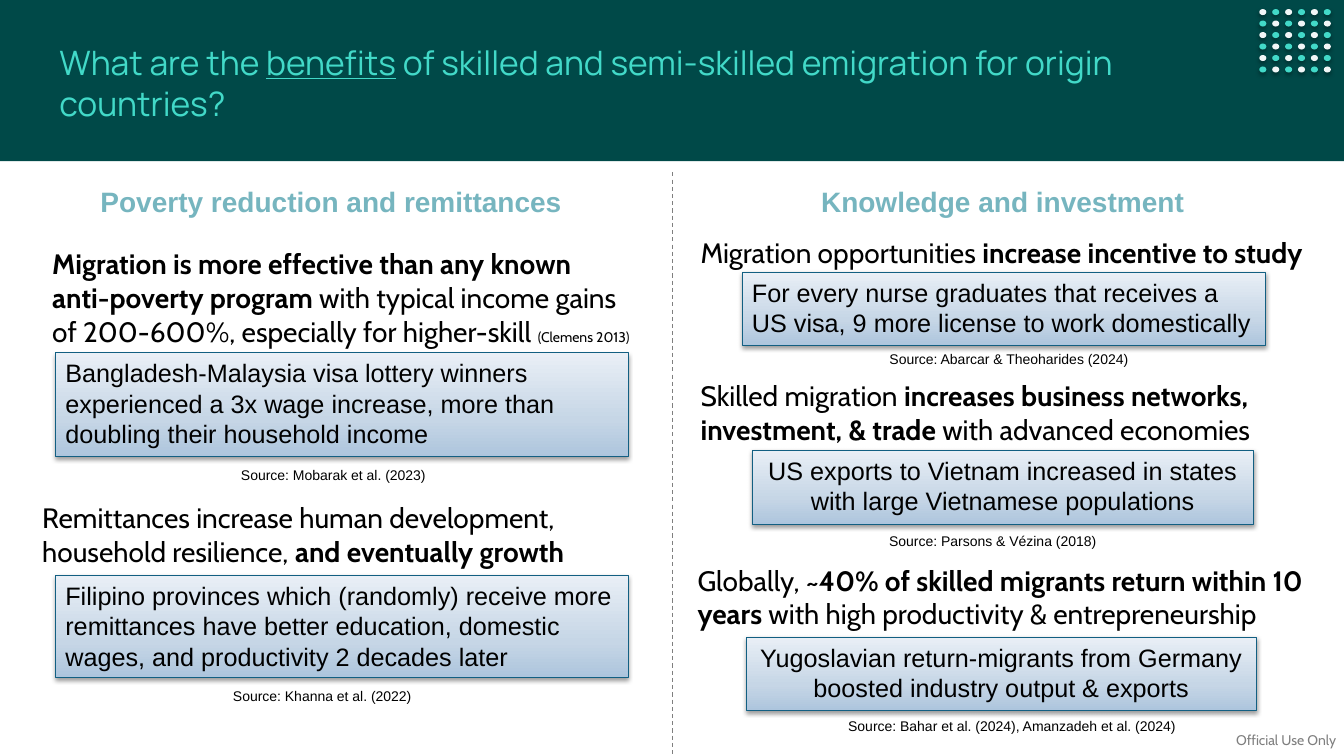
from lxml import etree
from pptx import Presentation
from pptx.dml.color import RGBColor
from pptx.enum.dml import MSO_LINE
from pptx.enum.shapes import MSO_CONNECTOR, MSO_SHAPE
from pptx.enum.text import MSO_ANCHOR, PP_ALIGN
from pptx.oxml import parse_xml
from pptx.oxml.ns import nsdecls, qn
from pptx.util import Inches, Pt

RECT, OVAL = MSO_SHAPE.RECTANGLE, MSO_SHAPE.OVAL
TOP, MID, BASE = MSO_ANCHOR.TOP, MSO_ANCHOR.MIDDLE, MSO_ANCHOR.BOTTOM
LEFT, CENTER = PP_ALIGN.LEFT, PP_ALIGN.CENTER

GREEN = RGBColor(0x00, 0x49, 0x48)
TEAL = RGBColor(0x42, 0xD9, 0xC8)
PALE = RGBColor(0xF1, 0xF6, 0xF7)
AQUA = RGBColor(0x76, 0xB5, 0xBF)
BLUE = RGBColor(0x12, 0x5F, 0x82)
GREY = RGBColor(0x7F, 0x7F, 0x7F)
BLACK = RGBColor(0, 0, 0)
WHITE = RGBColor(0xFF, 0xFF, 0xFF)
FADE = [(0, "ADC5DD"), (35, "C6D6E6"), (100, "E9EFF6")]

# Content: places are (left, top, width, height) in inches
TITLE = ["What are the ", "benefits",
         " of skilled and semi-skilled emigration for origin countries?"]
HEADS = [
    ((0.22, 1.9, 6.13, 0.31), "Poverty reduction and remittances"),
    ((6.88, 1.9, 6.13, 0.31), "Knowledge and investment"),
]
# Runs are (text, bold, size)
CLAIMS = [
    ((0.42, 2.4, 5.93, 1.11), [
        ("Migration is more effective than any known anti-poverty program ", True, 20),
        ("with typical income gains of 200-600%, especially for higher-skill ", False, 20),
        ("(Clemens 2013)", False, 10)]),
    ((0.32, 4.92, 6.02, 0.77), [
        ("Remittances increase human development, household resilience, ", False, 20),
        ("and eventually growth", True, 20)]),
    ((6.85, 2.29, 6.44, 0.44), [
        ("Migration opportunities ", False, 20),
        ("increase incentive to study", True, 20)]),
    ((6.85, 3.71, 6.35, 0.77), [
        ("Skilled migration ", False, 20),
        ("increases business networks, investment, & trade", True, 20),
        (" with advanced economies", False, 20)]),
    ((6.82, 5.54, 6.44, 0.77), [
        ("Globally, ", False, 20),
        ("~40% of skilled migrants return within 10 years", True, 20),
        (" with high productivity & entrepreneurship", False, 20)]),
]
SOURCES = [
    ((1.73, 4.59, 3.15, 0.21), "Source: Mobarak et al. (2023)"),
    ((1.62, 6.78, 3.15, 0.21), "Source: Khanna et al. (2022)"),
    ((8.01, 3.46, 3.99, 0.17), "Source: Abarcar & Theoharides (2024)"),
    ((8.27, 5.24, 3.15, 0.21), "Source: Parsons & Vézina (2018)"),
    ((8.04, 7.1, 3.99, 0.17), "Source: Bahar et al. (2024), Amanzadeh et al. (2024)"),
]
FACTS = [
    ((0.55, 3.5, 5.68, 1.03), LEFT,
     "Bangladesh-Malaysia visa lottery winners experienced a 3x wage increase, "
     "more than doubling their household income"),
    ((0.55, 5.71, 5.68, 1.01), LEFT,
     "Filipino provinces which (randomly) receive more remittances have better "
     "education, domestic wages, and productivity 2 decades later"),
    ((7.36, 2.7, 5.19, 0.73), LEFT,
     "For every nurse graduates that receives a US visa, 9 more license to work "
     "domestically"),
    ((7.46, 4.47, 4.97, 0.73), CENTER,
     "US exports to Vietnam increased in states with large Vietnamese populations"),
    ((7.4, 6.32, 5.06, 0.73), CENTER,
     "Yugoslavian return-migrants from Germany boosted industry output & exports"),
]

prs = Presentation()
prs.slide_width, prs.slide_height = Inches(13.33), Inches(7.5)
slide = prs.slides.add_slide(prs.slide_layouts[6])
shapes = slide.shapes


def add_shape(kind, place, color=None):
    shape = shapes.add_shape(kind, *map(Inches, place))
    shape.shadow.inherit = False
    shape.line.fill.background()
    if color is not None:
        shape.fill.solid()
        shape.fill.fore_color.rgb = color
    return shape


def add_box(place):
    return shapes.add_textbox(*map(Inches, place))


def set_text(shape, runs, font, size, color, align=LEFT, anchor=TOP):
    frame = shape.text_frame
    frame.word_wrap = True
    frame.vertical_anchor = anchor
    para = frame.paragraphs[0]
    para.alignment = align
    para.font.name, para.font.size = font, Pt(size)
    para.font.color.rgb = color
    for text in runs:
        para.add_run().text = text
    return para


def add_shadow(shape, alpha, blur, dist):
    effects = shape._element.spPr.find(qn("a:effectLst"))
    effects.append(parse_xml(
        f'<a:outerShdw {nsdecls("a")} blurRad="{Pt(blur)}" dist="{Pt(dist)}" '
        f'dir="5400000" rotWithShape="0"><a:srgbClr val="000000">'
        f'<a:alpha val="{alpha * 1000}"/></a:srgbClr></a:outerShdw>'))


def add_fade(shape):
    stops = "".join(f'<a:gs pos="{pos * 1000}"><a:srgbClr val="{color}"/></a:gs>'
                    for pos, color in FADE)
    shape._element.spPr.find(qn("a:ln")).addprevious(parse_xml(
        f'<a:gradFill {nsdecls("a")} rotWithShape="1"><a:gsLst>{stops}</a:gsLst>'
        f'<a:lin ang="16200000" scaled="0"/></a:gradFill>'))


# Footer label
label = add_box((12.26, 7.26, 1.07, 0.17))
set_text(label, ["Official Use Only"], "Cabin", 10, GREY)
frame = label.text_frame
frame.word_wrap = False
frame.margin_left = frame.margin_right = frame.margin_top = frame.margin_bottom = 0

# Banner, title and dot grid
add_shape(RECT, (0, 0, 13.33, 1.6), GREEN)
para = set_text(add_box((0.49, 0.37, 11.55, 0.91)), TITLE, "Manrope", 24, TEAL)
para.runs[1].font.underline = True
for col in range(6):
    for row in range(6):
        place = (12.49 + 0.128 * col, 0.09 + 0.114 * row, 0.07, 0.06)
        dot = add_shape(OVAL, place, TEAL if (col + row) % 2 else PALE)
        add_shadow(dot, 35, 3.1, 1.8)

# Divider between the columns
rule = shapes.add_connector(MSO_CONNECTOR.STRAIGHT, Inches(6.67), Inches(1.71),
                            Inches(6.67), Inches(7.5))
rule.line.color.rgb = GREY
rule.line.width = Pt(0.75)
rule.line.dash_style = MSO_LINE.DASH
etree.SubElement(rule._element.spPr, qn("a:effectLst"))

# Column heads
for place, text in HEADS:
    para = set_text(add_box(place), [text], "Arial", 20, AQUA, CENTER, BASE)
    para.font.bold = True

# Claims
for place, runs in CLAIMS:
    para = set_text(add_box(place), [run[0] for run in runs], "Cabin", 20, BLACK)
    for run, (_, bold, size) in zip(para.runs, runs):
        run.font.bold, run.font.size = bold, Pt(size)

# Source lines
for place, text in SOURCES:
    para = set_text(add_shape(RECT, place, WHITE), [text], "Arial", 10, BLACK,
                    CENTER, MID)
    para.line_spacing, para.space_after = 1.2, Pt(6)

# Fact boxes
for place, align, text in FACTS:
    fact = add_shape(RECT, place)
    fact.line.color.rgb = BLUE
    fact.line.width = Pt(0.75)
    add_fade(fact)
    add_shadow(fact, 38, 3.1, 1.6)
    set_text(fact, [text], "Arial", 18, BLACK, align)

prs.save("out.pptx")
